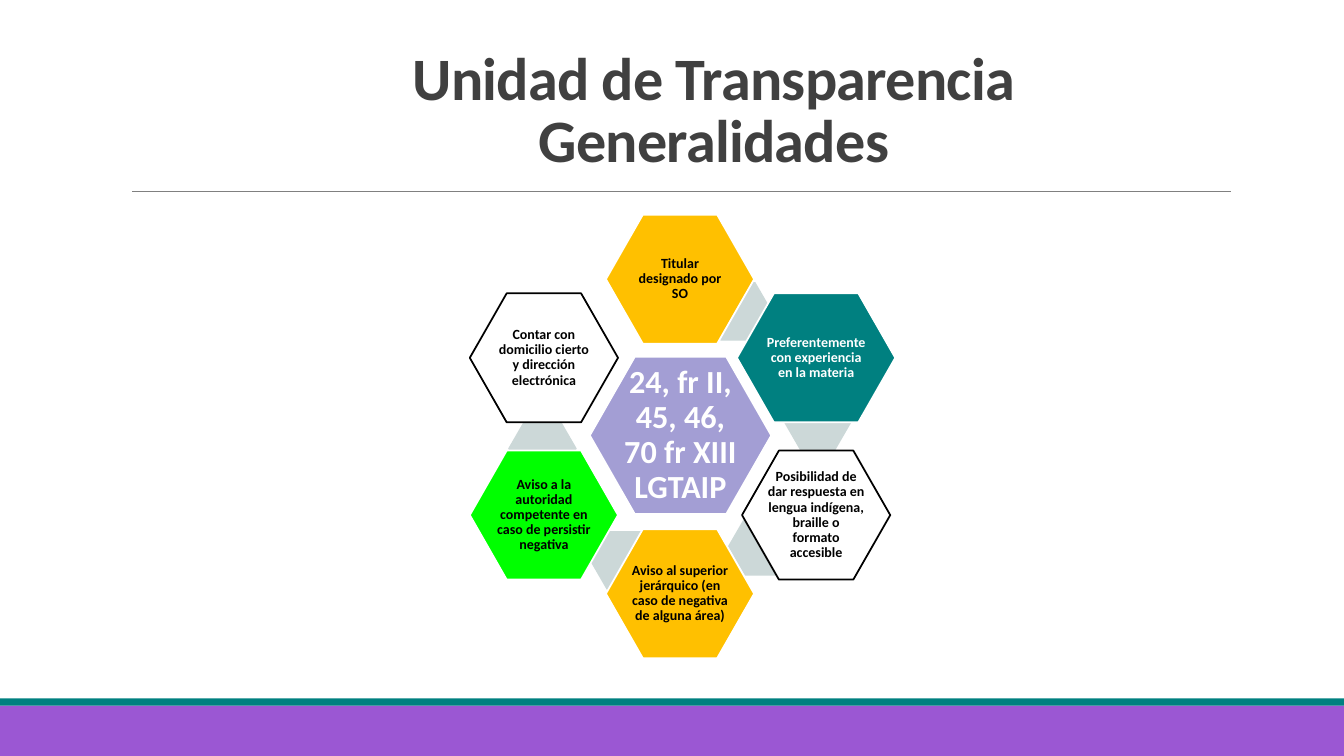
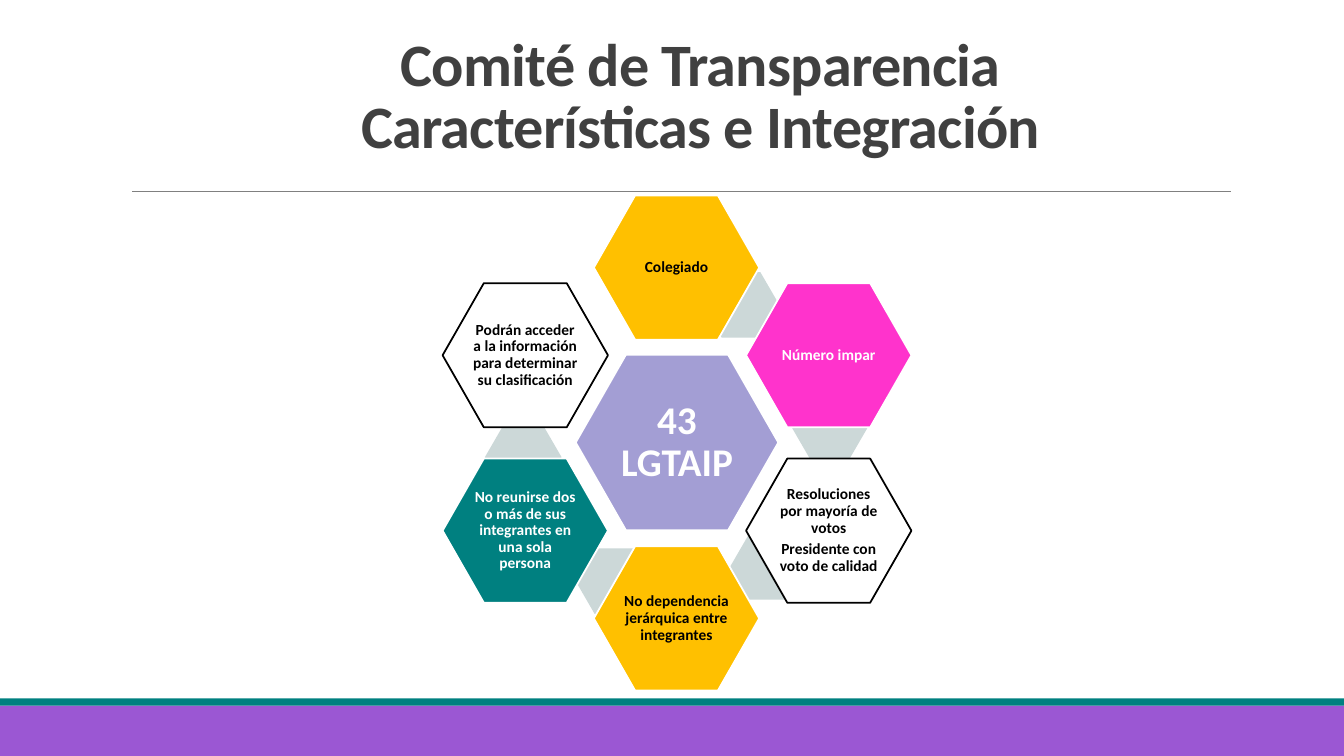
from dataclasses import dataclass
from itertools import zip_longest
from math import cos, radians, sin
from typing import NamedTuple

from lxml.etree import SubElement
from pptx import Presentation
from pptx.dml.color import RGBColor
from pptx.enum.shapes import MSO_CONNECTOR as Connector, MSO_SHAPE as Preset
from pptx.enum.text import MSO_ANCHOR as Anchor, PP_ALIGN as Align
from pptx.oxml.ns import qn
from pptx.util import Emu, Pt

EMU_PER_PX = 9144  # 100 px to the inch
SLIDE_W, SLIDE_H = 1333, 750


@dataclass(frozen=True)
class Theme:
    font: str = "Calibri"
    title_size: int = 43
    title_ink: str = "404040"
    rule: str = "808080"
    band: str = "9B57D3"
    teal: str = "008080"
    hub: str = "A39ED4"
    link: str = "CCD8D8"
    amber: str = "FFC000"
    green: str = "00FF00"
    pink: str = "FF33CC"
    white: str = "FFFFFF"
    black: str = "000000"
    outline: float = 1.25
    hairline: float = 0.5


THEME = Theme()


class Look(NamedTuple):
    fill: str
    line: str
    ink: str


HUB = Look(THEME.hub, THEME.white, THEME.white)
AMBER = Look(THEME.amber, THEME.white, THEME.black)
GREEN = Look(THEME.green, THEME.white, THEME.black)
TEAL = Look(THEME.teal, THEME.white, THEME.white)
PINK = Look(THEME.pink, THEME.white, THEME.white)
OUTLINED = Look(THEME.white, THEME.black, THEME.black)


class Box(NamedTuple):
    x: int
    y: int
    w: int
    h: int


class Petal(NamedTuple):
    paragraphs: tuple[str, ...]
    look: Look
    extra_w: int = 0


@dataclass(frozen=True)
class Cluster:
    title: tuple[str, ...]
    title_box: Box
    center: tuple[float, float]
    radius: int  # from the hub's centre to each petal's centre
    hub: str
    hub_size: int
    petal_size: int
    inset: int
    petals: tuple[Petal, ...]


# Sizes and link places as fractions of the cluster radius
HUB_RATIO = (1.155, 1.0)
PETAL_RATIO = (0.945, 0.82)
LINK_RATIO = (0.436, 0.374)
LINK_OFFSETS = ((0.365, -0.79), (0.87, -0.09), (0.52, 0.705),
                (-0.36, 0.79), (-0.875, 0.08))


def px(value: int) -> Emu:
    return Emu(value * EMU_PER_PX)


def box_at(cx: float, cy: float, w: float, h: float) -> Box:
    return Box(round(cx - w / 2), round(cy - h / 2), round(w), round(h))


def write(sp, paragraphs: tuple[str, ...], *, size: int, ink: str,
          anchor=Anchor.MIDDLE, inset: tuple[int, int] = (0, 0),
          line_spacing: float = 0.9, space_after: float = 0,
          tracking: int = 0) -> None:
    """Fill a shape with bold, centred paragraphs."""
    tf = sp.text_frame
    tf.word_wrap = True
    tf.vertical_anchor = anchor
    tf.margin_left = tf.margin_right = px(inset[0])
    tf.margin_top = tf.margin_bottom = px(inset[1])
    for i, text in enumerate(paragraphs):
        p = tf.add_paragraph() if i else tf.paragraphs[0]
        p.alignment = Align.CENTER
        p.line_spacing = line_spacing
        p.space_after = Pt(space_after)
        r = p.add_run()
        r.text = text
        r.font.name, r.font.size, r.font.bold = THEME.font, Pt(size), True
        r.font.color.rgb = RGBColor.from_string(ink)
        if tracking:
            r.font._element.set("spc", str(tracking))


def add_preset(shapes, preset, box: Box, fill: str, line: str | None = None):
    sp = shapes.add_shape(preset, *map(px, box))
    sp.shadow.inherit = False
    sp.fill.solid()
    sp.fill.fore_color.rgb = RGBColor.from_string(fill)
    if line:
        sp.line.color.rgb = RGBColor.from_string(line)
        sp.line.width = Pt(THEME.outline)
    else:
        sp.line.fill.background()
    return sp


def add_hexagon(shapes, box: Box, fill: str, line: str | None = None,
                adjust: float = 0.286):
    sp = add_preset(shapes, Preset.HEXAGON, box, fill, line)
    sp.adjustments[0] = adjust
    return sp


def add_frame(s) -> None:
    """Footer bands and the rule under the title."""
    add_preset(s.shapes, Preset.RECTANGLE, Box(0, 700, SLIDE_W, 50), THEME.band)
    add_preset(s.shapes, Preset.RECTANGLE, Box(0, 693, SLIDE_W, 7), THEME.teal)
    rule = s.shapes.add_connector(
        Connector.STRAIGHT, px(131), px(190), px(1221), px(190))
    rule.line.color.rgb = RGBColor.from_string(THEME.rule)
    rule.line.width = Pt(THEME.hairline)
    SubElement(rule._element.spPr, qn("a:effectLst"))


def add_title(s, lines: tuple[str, ...], box: Box) -> None:
    sp = s.shapes.add_textbox(*map(px, box))
    write(sp, lines, size=THEME.title_size, ink=THEME.title_ink,
          anchor=Anchor.BOTTOM, inset=(10, 5), line_spacing=0.85, tracking=-50)


def add_cluster(s, c: Cluster) -> None:
    """A hub ringed by petals, with a link behind each petal but the last."""
    shapes = s.shapes.add_group_shape().shapes
    cx, cy = c.center
    rad = c.radius

    def place(dx: float, dy: float, ratio: tuple[float, float],
              extra_w: int = 0) -> Box:
        return box_at(cx + dx * rad, cy + dy * rad,
                      ratio[0] * rad + extra_w, ratio[1] * rad)

    def add_label(box: Box, look: Look, paragraphs: tuple[str, ...],
                  size: int, inset: int) -> None:
        sp = add_hexagon(shapes, box, look.fill, look.line)
        write(sp, paragraphs, size=size, ink=look.ink,
              inset=(inset, inset), space_after=0.35 * size)

    add_label(place(0, 0, HUB_RATIO), HUB, (c.hub,), c.hub_size, c.inset + 2)
    for i, (petal, link) in enumerate(zip_longest(c.petals, LINK_OFFSETS)):
        if link:
            add_hexagon(shapes, place(*link, LINK_RATIO), THEME.link,
                        adjust=0.289)
        angle = radians(60 * i - 90)
        add_label(place(cos(angle), sin(angle), PETAL_RATIO, petal.extra_w),
                  petal.look, petal.paragraphs, c.petal_size, c.inset)


CLUSTERS = (
    Cluster(
        title=("Unidad de Transparencia", "Generalidades"),
        title_box=Box(184, 43, 1048, 135),
        center=(675, 432.5), radius=156,
        hub="24, fr II, 45, 46, 70 fr XIII LGTAIP",
        hub_size=23, petal_size=10, inset=1,
        petals=(
            Petal(("Titular designado por SO",), AMBER),
            Petal(("Preferentemente con experiencia en la materia",), TEAL, 10),
            Petal(("Posibilidad de dar respuesta en lengua indígena, "
                   "braille o formato accesible",), OUTLINED),
            Petal(("Aviso al superior jerárquico (en caso de negativa "
                   "de alguna área)",), AMBER),
            Petal(("Aviso a la autoridad competente en caso de persistir "
                   "negativa",), GREEN),
            Petal(("Contar con domicilio cierto y dirección electrónica",),
                  OUTLINED),
        ),
    ),
    Cluster(
        title=("Comité de Transparencia", "Características e Integración"),
        title_box=Box(171, 29, 1048, 135),
        center=(671.5, 439.5), radius=174,
        hub="43 LGTAIP",
        hub_size=28, petal_size=11, inset=2,
        petals=(
            Petal(("Colegiado",), AMBER),
            Petal(("Número impar",), PINK),
            Petal(("Resoluciones por mayoría de votos",
                   "Presidente con voto de calidad"), OUTLINED),
            Petal(("No dependencia jerárquica entre integrantes",), AMBER),
            Petal(("No reunirse dos o más de sus integrantes en una sola "
                   "persona",), TEAL),
            Petal(("Podrán acceder a la información para determinar su "
                   "clasificación",), OUTLINED),
        ),
    ),
)


def main() -> None:
    prs = Presentation()
    prs.slide_width, prs.slide_height = px(SLIDE_W), px(SLIDE_H)
    for cluster in CLUSTERS:
        s = prs.slides.add_slide(prs.slide_layouts[6])
        add_frame(s)
        add_title(s, cluster.title, cluster.title_box)
        add_cluster(s, cluster)
    prs.save("out.pptx")


if __name__ == "__main__":
    main()
